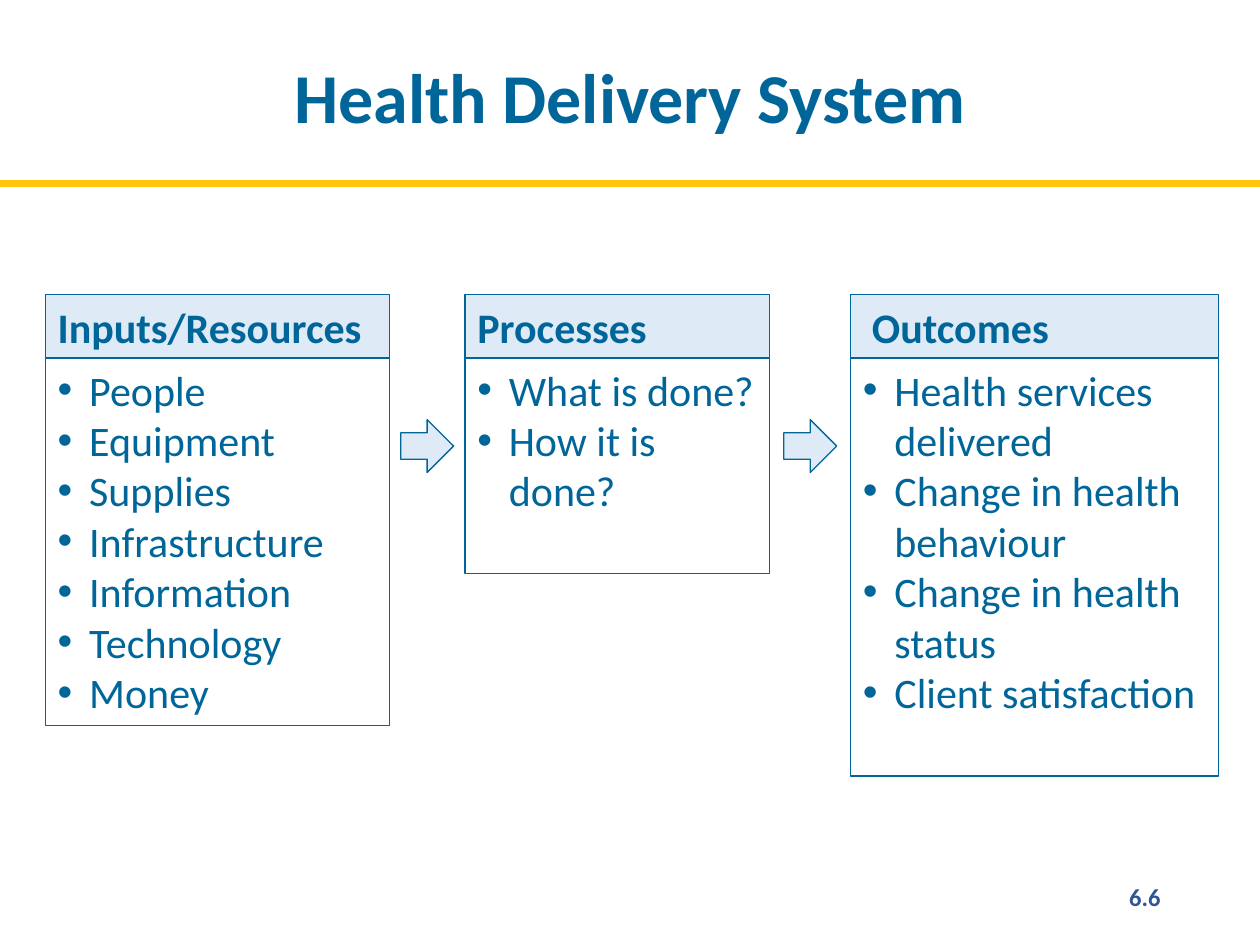
from lxml.etree import SubElement
from pptx import Presentation
from pptx.dml.color import RGBColor
from pptx.enum.shapes import MSO_CONNECTOR, MSO_SHAPE
from pptx.enum.text import MSO_ANCHOR, PP_ALIGN
from pptx.oxml.ns import qn
from pptx.util import Inches, Pt

COLORS = {"ink": "006699", "tint": "DEEBF7", "paper": "FFFFFF",
          "rule": "FFC60B", "number": "2F5597"}
WIDTH, HEIGHT = 10, 7.5
HEADER_TOP, HEADER_HEIGHT = 2.34, 0.5
LIST_TOP = HEADER_TOP + HEADER_HEIGHT
ARROW_TOP, ARROW_SIZE = 3.33, 0.42
STAGES = [
    ("Inputs/Resources", 0.36, 2.73, 2.92, 0.1,
     ["People", "Equipment", "Supplies", "Infrastructure", "Information",
      "Technology", "Money"]),
    ("Processes", 3.69, 2.42, 1.71, 0.1, ["What is done?", "How it is done?"]),
    ("Outcomes", 6.75, 2.92, 3.32, 0.17,
     ["Health services delivered", "Change in health behaviour",
      "Change in health status", "Client satisfaction"]),
]


def rgb(name):
    """Return the named palette colour."""
    return RGBColor.from_string(COLORS[name])


def style_text(paragraph, size, color="ink", bold=False):
    """Set the font of a whole paragraph."""
    font = paragraph.font
    font.name, font.size, font.bold = "Calibri", Pt(size), bold
    font.color.rgb = rgb(color)


def add_panel(slide, kind, box, fill):
    """Add a thinly outlined shape with left-aligned text from the top."""
    panel = slide.shapes.add_shape(kind, *map(Inches, box))
    panel.shadow.inherit = False
    panel.fill.solid()
    panel.fill.fore_color.rgb = rgb(fill)
    panel.line.color.rgb = rgb("ink")
    panel.line.width = Pt(0.75)
    panel.text_frame.vertical_anchor = MSO_ANCHOR.TOP
    return panel


def add_bullet(paragraph):
    """Give a paragraph a hanging round bullet."""
    properties = paragraph._p.get_or_add_pPr()
    properties.set("marL", str(Inches(0.25)))
    properties.set("indent", str(-Inches(0.25)))
    SubElement(properties, qn("a:buFont"), typeface="Arial")
    SubElement(properties, qn("a:buChar"), char="•")


def add_stage(slide, heading, left, width, list_height, heading_inset, items):
    """Add a stage: its bulleted list under a tinted heading."""
    listing = add_panel(slide, MSO_SHAPE.RECTANGLE,
                        (left, LIST_TOP, width, list_height), "paper")
    frame = listing.text_frame
    for index, item in enumerate(items):
        paragraph = frame.add_paragraph() if index else frame.paragraphs[0]
        paragraph.text = item
        paragraph.alignment = PP_ALIGN.LEFT
        add_bullet(paragraph)
        style_text(paragraph, 24)

    header = add_panel(slide, MSO_SHAPE.RECTANGLE,
                       (left, HEADER_TOP, width, HEADER_HEIGHT), "tint")
    header.text_frame.margin_left = Inches(heading_inset)
    title = header.text_frame.paragraphs[0]
    title.text = heading
    title.alignment = PP_ALIGN.LEFT
    style_text(title, 24, bold=True)


def add_flow_arrow(slide, gap_left, gap_right):
    """Add an arrow centred in the gap between two stages."""
    left = (gap_left + gap_right - ARROW_SIZE) / 2
    add_panel(slide, MSO_SHAPE.RIGHT_ARROW,
              (left, ARROW_TOP, ARROW_SIZE, ARROW_SIZE), "tint")


def add_label(slide, text, box, size, color, alignment):
    """Add a bold one-line text box and return its frame."""
    frame = slide.shapes.add_textbox(*map(Inches, box)).text_frame
    frame.word_wrap = True
    paragraph = frame.paragraphs[0]
    paragraph.text = text
    paragraph.alignment = alignment
    style_text(paragraph, size, color, bold=True)
    return frame


def add_title(slide, text):
    """Add the slide title in the band above the rule."""
    frame = add_label(slide, text, (0, 0, WIDTH, 1.45), 40, "ink",
                      PP_ALIGN.CENTER)
    frame.vertical_anchor = MSO_ANCHOR.MIDDLE
    frame.margin_left = frame.margin_right = frame.margin_top = Inches(0.2)
    frame.paragraphs[0].line_spacing = 0.9


def add_rule(slide, top):
    """Add the full-width rule under the title."""
    rule = slide.shapes.add_connector(MSO_CONNECTOR.STRAIGHT, 0, Inches(top),
                                      Inches(WIDTH), Inches(top))
    rule.line.color.rgb = rgb("rule")
    rule.line.width = Pt(4)
    SubElement(rule._element.spPr, qn("a:effectLst"))


def main():
    """Build and save the slide."""
    deck = Presentation()
    deck.slide_width, deck.slide_height = Inches(WIDTH), Inches(HEIGHT)
    slide = deck.slides.add_slide(deck.slide_layouts[6])
    add_rule(slide, 1.46)
    for stage in STAGES:
        add_stage(slide, *stage)
    for before, after in zip(STAGES, STAGES[1:]):
        add_flow_arrow(slide, before[1] + before[2], after[1])
    add_title(slide, "Health Delivery System")
    add_label(slide, "6.6", (7.06, 6.95, 2.25, 0.4), 14, "number",
              PP_ALIGN.RIGHT)
    deck.save("out.pptx")


if __name__ == "__main__":
    main()
